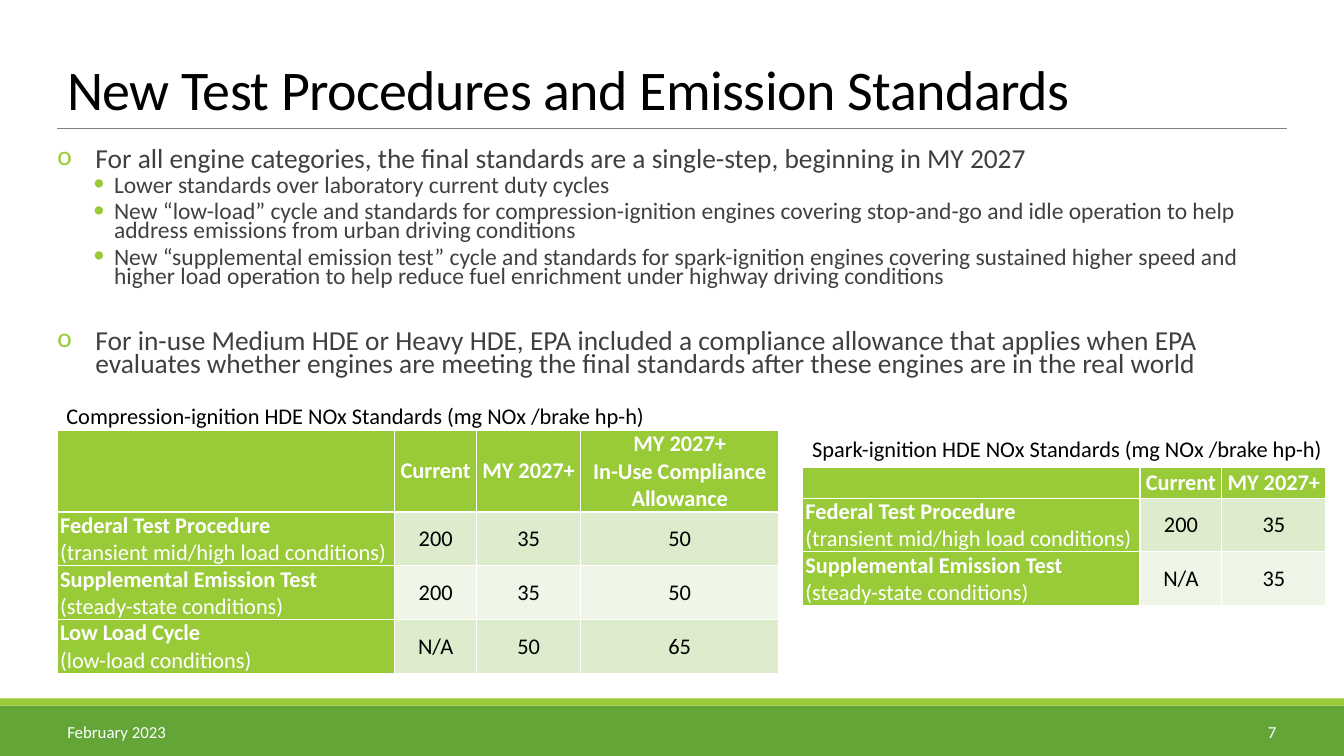
from lxml.etree import SubElement
from pptx import Presentation
from pptx.dml.color import RGBColor
from pptx.enum.shapes import MSO_CONNECTOR, MSO_SHAPE
from pptx.enum.text import MSO_ANCHOR as Anchor, PP_ALIGN as Align
from pptx.oxml import parse_xml
from pptx.oxml.ns import nsdecls, qn
from pptx.util import Pt

FONT = "Calibri"
GREEN, LIME = "63A537", "99CB38"
WHITE, BLACK, DARK, GRAY = "FFFFFF", "000000", "404040", "808080"
BANDS = ["DEECCE", "EFF6E8"]
LEFT, WIDTH = 41, 878.4
SLIDE_WIDTH, SLIDE_HEIGHT = 960, 540

TITLE = "New Test Procedures and Emission Standards"
BULLETS = [
    (0, 9, "For all engine categories, the final standards are a single-step, beginning in MY 2027"),
    (1, 1.5, "Lower standards over laboratory current duty cycles"),
    (1, 1.5, "New “low-load” cycle and standards for compression-ignition engines covering "
             "stop-and-go and idle operation to help address emissions from urban driving conditions"),
    (1, 1.5, "New “supplemental emission test” cycle and standards for spark-ignition engines covering "
             "sustained higher speed and higher load operation to help reduce fuel enrichment "
             "under highway driving conditions"),
    (0, 28, "For in-use Medium HDE or Heavy HDE, EPA included a compliance allowance that applies "
            "when EPA evaluates whether engines are meeting the final standards after these "
            "engines are in the real world"),
]
LEVELS = [
    dict(size=19.6, margin=27.2, hanging=27.2, after=1.5, mark="o"),
    dict(size=16.8, margin=40.5, hanging=15, after=3, mark="•"),
]

FEDERAL = "Federal Test Procedure\n(transient mid/high load conditions)"
SUPPLEMENTAL = "Supplemental Emission Test\n(steady-state conditions)"
LOW_LOAD = "Low Load Cycle\n(low-load conditions)"
COLUMN_WIDTHS = [241, 58.5, 74.3, 141.6]
ROW_HEIGHT = 38.4
TABLES = [
    dict(caption="Spark-ignition HDE NOx Standards (mg NOx /brake hp-h)",
         caption_box=(573.1, 307.5, 383.8, 26.6), left=573.3, top=333.8, header_height=22,
         rows=[("", "Current", "MY 2027+"),
               (FEDERAL, "200", "35"),
               (SUPPLEMENTAL, "N/A", "35")]),
    dict(caption="Compression-ignition HDE NOx Standards (mg NOx /brake hp-h)",
         caption_box=(40.3, 283.9, 432.7, 26.6), left=LEFT, top=307.5, header_height=58.2,
         rows=[("", "Current", "MY 2027+", "MY 2027+\nIn-Use Compliance Allowance"),
               (FEDERAL, "200", "35", "50"),
               (SUPPLEMENTAL, "200", "35", "50"),
               (LOW_LOAD, "N/A", "50", "65")]),
]
FOOTERS = [("February 2023", 41, 103.7, Align.LEFT), ("7", 815.8, 103, Align.RIGHT)]


def color(value):
    return RGBColor.from_string(value)


def style(paragraph, size, text_color, align=Align.LEFT, bold=False):
    font = paragraph.font
    font.name, font.size, font.bold = FONT, Pt(size), bold
    font.color.rgb = color(text_color)
    paragraph.alignment = align


def add_bar(slide, top, height, fill):
    shape = slide.shapes.add_shape(MSO_SHAPE.RECTANGLE, 0, Pt(top), Pt(SLIDE_WIDTH), Pt(height))
    shape.shadow.inherit = False
    shape.fill.solid()
    shape.fill.fore_color.rgb = color(fill)
    shape.line.fill.background()


def add_text(slide, box, text, size, text_color, align=Align.LEFT, anchor=Anchor.TOP, wrap=True):
    frame = slide.shapes.add_textbox(*map(Pt, box)).text_frame
    frame.word_wrap = wrap
    frame.vertical_anchor = anchor
    frame.text = text
    style(frame.paragraphs[0], size, text_color, align)
    return frame


def add_bullet(paragraph, level, before, text):
    look = LEVELS[level]
    paragraph.text = text
    paragraph.level = level
    style(paragraph, look["size"], DARK)
    paragraph.line_spacing = 0.7
    paragraph.space_before, paragraph.space_after = Pt(before), Pt(look["after"])
    properties = paragraph._p.get_or_add_pPr()
    properties.set("marL", str(Pt(look["margin"])))
    properties.set("indent", str(-Pt(look["hanging"])))
    marks = [
        f'<a:buClr {nsdecls("a")}><a:srgbClr val="{LIME}"/></a:buClr>',
        f'<a:buFont {nsdecls("a")} typeface="{FONT}"/>',
        f'<a:buChar {nsdecls("a")} char="{look["mark"]}"/>',
    ]
    position = properties.index(properties.find(qn("a:defRPr")))
    for offset, mark in enumerate(marks):
        properties.insert(position + offset, parse_xml(mark))


def add_borders(cell):
    properties = cell._tc.get_or_add_tcPr()
    for position, side in enumerate("LRTB"):
        properties.insert(position, parse_xml(
            f'<a:ln{side} {nsdecls("a")} w="{Pt(1)}"><a:solidFill>'
            f'<a:srgbClr val="{WHITE}"/></a:solidFill></a:ln{side}>'))


def fill_cell(cell, text, row, column):
    heading = row == 0 or column == 0
    cell.text = text
    cell.vertical_anchor = Anchor.MIDDLE
    cell.margin_left = cell.margin_right = Pt(2)
    cell.margin_top = cell.margin_bottom = 0
    cell.fill.solid()
    cell.fill.fore_color.rgb = color(LIME if heading else BANDS[(row - 1) % 2])
    for line, paragraph in enumerate(cell.text_frame.paragraphs):
        style(paragraph, 16, WHITE if heading else BLACK,
              Align.CENTER if column else Align.LEFT,
              bold=row == 0 or (column == 0 and line == 0))
    add_borders(cell)


def add_standards(slide, caption, caption_box, left, top, header_height, rows):
    add_text(slide, caption_box, caption, 16, BLACK, wrap=False)
    widths = COLUMN_WIDTHS[:len(rows[0])]
    heights = [header_height] + [ROW_HEIGHT] * (len(rows) - 1)
    table = slide.shapes.add_table(len(rows), len(widths), Pt(left), Pt(top),
                                   Pt(sum(widths)), Pt(sum(heights))).table
    table.first_row = table.horz_banding = False
    for column, width in zip(table.columns, widths):
        column.width = Pt(width)
    for row, height in zip(table.rows, heights):
        row.height = Pt(height)
    for row, texts in enumerate(rows):
        for column, text in enumerate(texts):
            fill_cell(table.cell(row, column), text, row, column)


def main():
    presentation = Presentation()
    presentation.slide_width, presentation.slide_height = Pt(SLIDE_WIDTH), Pt(SLIDE_HEIGHT)
    slide = presentation.slides.add_slide(presentation.slide_layouts[6])

    add_bar(slide, 504, 36, GREEN)
    add_bar(slide, 498.8, 5.2, LIME)
    rule = slide.shapes.add_connector(MSO_CONNECTOR.STRAIGHT, Pt(LEFT), Pt(92), Pt(LEFT + WIDTH), Pt(92))
    rule.line.color.rgb = color(GRAY)
    rule.line.width = Pt(0.5)
    SubElement(rule._element.spPr, qn("a:effectLst"))

    title = add_text(slide, (LEFT, 23, WIDTH, 67.7), TITLE, 40, BLACK, anchor=Anchor.BOTTOM).paragraphs[0]
    title.line_spacing = 0.85
    title.runs[0].font._element.set("spc", "-40")

    body = slide.shapes.add_textbox(*map(Pt, (LEFT, 103.7, WIDTH, 180))).text_frame
    body.word_wrap = True
    body.margin_left = body.margin_right = 0
    for index, bullet in enumerate(BULLETS):
        add_bullet(body.add_paragraph() if index else body.paragraphs[0], *bullet)

    for table in TABLES:
        add_standards(slide, **table)
    for text, left, width, align in FOOTERS:
        add_text(slide, (left, 508.3, width, 28.8), text, 12, WHITE, align, Anchor.MIDDLE)

    presentation.save("out.pptx")


if __name__ == "__main__":
    main()
